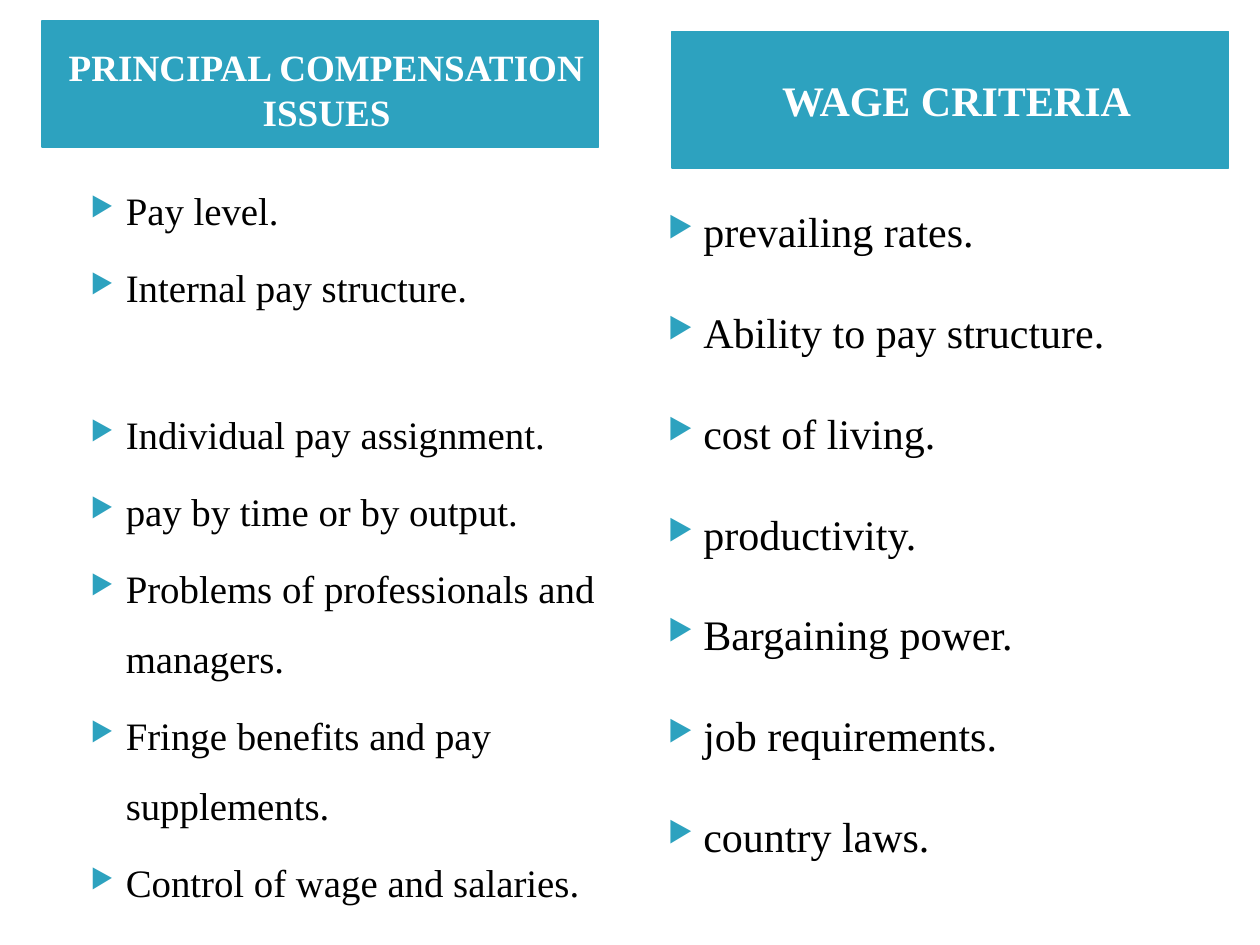
import pptx
import pptx.util
import pptx.dml.color
import pptx.enum.shapes
import pptx.enum.text
from lxml import etree

Pt = pptx.util.Pt
COLORS = {"accent": "2DA2BF", "heading": "FFFFFF", "body": "000000"}
FONT = "Times New Roman"


def rgb(name):
    return pptx.dml.color.RGBColor.from_string(COLORS[name])


def add_run(paragraph, text, size, color, bold=False):
    run = paragraph.add_run()
    run.text = text
    run.font.name = FONT
    run.font.size = Pt(size)
    run.font.bold = bold
    run.font.color.rgb = rgb(color)


def add_bullet(paragraph):
    """Give the paragraph a hanging accent-coloured triangle."""
    props = paragraph._p.get_or_add_pPr()
    props.set("marL", str(Pt(28.8)))
    props.set("indent", str(Pt(-20.16)))
    tag = "{http://schemas.openxmlformats.org/drawingml/2006/main}"
    color = etree.SubElement(props, tag + "buClr")
    etree.SubElement(color, tag + "srgbClr", val=COLORS["accent"])
    etree.SubElement(props, tag + "buSzPct", val="68000")
    etree.SubElement(props, tag + "buChar", char="▶")


def add_heading(slide, box, text, size, top_inset=3.6):
    banner = slide.shapes.add_shape(
        pptx.enum.shapes.MSO_SHAPE.RECTANGLE, *map(Pt, box))
    banner.shadow.inherit = False
    banner.fill.solid()
    banner.fill.fore_color.rgb = rgb("accent")
    banner.line.color.rgb = rgb("accent")
    banner.line.width = Pt(0.75)
    frame = banner.text_frame
    frame.word_wrap = True
    frame.vertical_anchor = pptx.enum.text.MSO_ANCHOR.MIDDLE
    frame.margin_left, frame.margin_right = Pt(14.4), Pt(7.2)
    frame.margin_top, frame.margin_bottom = Pt(top_inset), Pt(3.6)
    paragraph = frame.paragraphs[0]
    paragraph.alignment = pptx.enum.text.PP_ALIGN.CENTER
    add_run(paragraph, text, size, "heading", bold=True)


def add_list(slide, box, items, size, gap, line_spacing=1.0, wide_gaps=None):
    """Place a bullet list; wide_gaps maps an item index to its own gap."""
    frame = slide.shapes.add_textbox(*map(Pt, box)).text_frame
    frame.word_wrap = True
    for index, item in enumerate(items):
        paragraph = frame.add_paragraph() if index else frame.paragraphs[0]
        add_bullet(paragraph)
        paragraph.line_spacing = line_spacing
        if index:
            paragraph.space_before = Pt((wide_gaps or {}).get(index, gap))
        add_run(paragraph, item, size, "body")


def main():
    deck = pptx.Presentation()
    deck.slide_width, deck.slide_height = Pt(720), Pt(540)
    slide = deck.slides.add_slide(deck.slide_layouts[6])

    # Left column: compensation issues
    add_heading(slide, (24, 12, 318, 72), "PRINCIPAL COMPENSATION ISSUES",
                21.2, top_inset=9.6)
    issues = [
        "Pay level.",
        "Internal pay structure.",
        "Individual pay assignment.",
        "pay by time or by output.",
        "Problems of professionals and managers.",
        "Fringe benefits and pay supplements.",
        "Control of wage and salaries.",
    ]
    add_list(slide, (36, 90, 318, 420), issues, 22.2, gap=4,
             line_spacing=1.5, wide_gaps={2: 44})

    # Right column: wage criteria
    add_heading(slide, (384, 18, 318, 78), "WAGE CRITERIA", 24)
    criteria = [
        "prevailing rates.",
        "Ability to pay structure.",
        "cost of living.",
        "productivity.",
        "Bargaining power.",
        "job requirements.",
        "country laws.",
    ]
    add_list(slide, (366, 114, 318, 384), criteria, 24, gap=28.8)

    deck.save("out.pptx")


if __name__ == "__main__":
    main()
